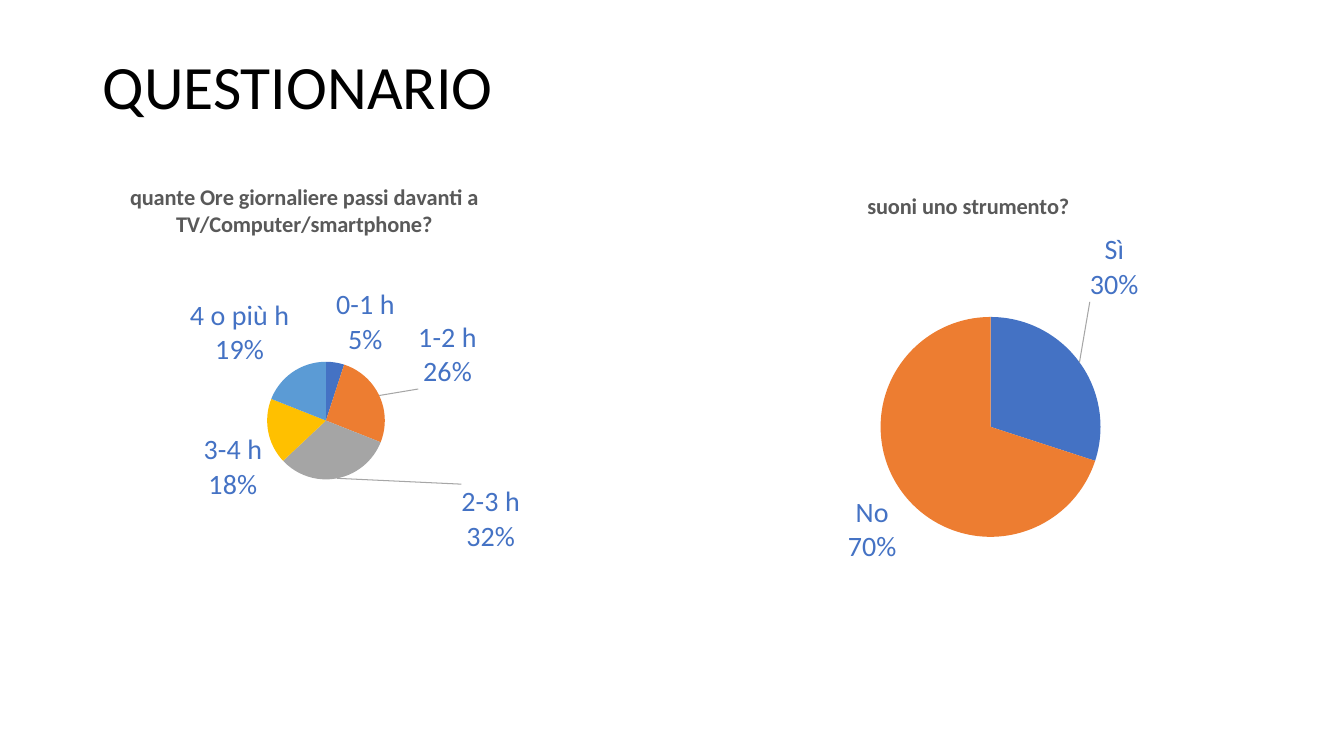
import copy
import pptx
import pptx.chart.data
import pptx.dml.color
import pptx.enum.chart
import pptx.enum.text
import pptx.oxml
import pptx.oxml.ns
import pptx.util

Inches, Pt = pptx.util.Inches, pptx.util.Pt
RGB = pptx.dml.color.RGBColor
qn = pptx.oxml.ns.qn

BLACK = RGB(0x00, 0x00, 0x00)
GREY = RGB(0x59, 0x59, 0x59)
BLUE = RGB(0x44, 0x72, 0xC4)
SLICES = [BLUE, RGB(0xED, 0x7D, 0x31), RGB(0xA5, 0xA5, 0xA5),
          RGB(0xFF, 0xC0, 0x00), RGB(0x5B, 0x9B, 0xD5)]

HEADING = "QUESTIONARIO"
CHARTS = [
    {"box": (0.37, 1.66, 5.56, 3.99),
     "title": "quante Ore giornaliere passi davanti a\nTV/Computer/smartphone?",
     "title_at": (0.16, 0.03),
     "plot": (0.41, 0.48, 0.21, 0.3),
     "data": {"0-1 h": 5, "1-2 h": 26, "2-3 h": 32, "3-4 h": 18, "4 o più h": 19},
     "moved": {1: (0.06, -0.01), 2: (0.22, 0)}},
    {"box": (7.08, 1.61, 5.49, 4.04),
     "title": "suoni uno strumento?",
     "title_at": (0.27, 0.06),
     "plot": (0.09, 0.38, 0.82, 0.54),
     "data": {"Sì": 30, "No": 70},
     "moved": {0: (0.01, -0.14)}},
]
TITLE_FONT = {"name": "Calibri", "size": Pt(16), "bold": True}
LABEL_FONT = {"name": "Calibri", "size": Pt(20), "bold": False}
HEADING_FONT = {"name": "Calibri", "size": Pt(44)}
LABELS = {"show_value": False, "show_category_name": True, "show_percentage": True,
          "position": pptx.enum.chart.XL_LABEL_POSITION.OUTSIDE_END}
NS = ('xmlns:c="http://schemas.openxmlformats.org/drawingml/2006/chart" '
      'xmlns:a="http://schemas.openxmlformats.org/drawingml/2006/main"')


def apply(obj, values):
    for name, value in values.items():
        setattr(obj, name, value)


def style(font, values, color):
    apply(font, values)
    font.color.rgb = color


def xml(tag, body):
    return pptx.oxml.parse_xml(f"<c:{tag} {NS}>{body}</c:{tag}>")


def layout(values, edge=True, inner=False):
    body = '<c:layoutTarget val="inner"/>' if inner else ""
    if edge:
        body += '<c:xMode val="edge"/><c:yMode val="edge"/>'
    body += "".join(f'<c:{k} val="{v}"/>' for k, v in zip("xywh", values))
    return xml("layout", f"<c:manualLayout>{body}</c:manualLayout>")


def drop_layout(parent):
    for old in parent.findall(qn("c:layout")):
        parent.remove(old)


def add_title(chart, text, at):
    tf = chart.chart_title.text_frame
    tf.text = text
    for p in tf.paragraphs:
        p.alignment = pptx.enum.text.PP_ALIGN.CENTER
        for r in p.runs:
            style(r.font, TITLE_FONT, GREY)
    title = chart.chart_title._element
    drop_layout(title)
    title.find(qn("c:tx")).addnext(layout(at))


def add_labels(series, moved):
    labels = series.data_labels
    apply(labels, LABELS)
    style(labels.font, LABEL_FONT, BLUE)
    el = labels._element
    el.find(qn("c:showBubbleSize")).addnext(xml("separator", "\n"))
    leader = el.find(qn("c:showLeaderLines"))
    leader.set("val", "1")
    shared = [child for child in el if child is not leader]
    leader.addnext(xml("leaderLines", '<c:spPr><a:ln w="9525"><a:solidFill>'
                       '<a:srgbClr val="A6A6A6"/></a:solidFill></a:ln></c:spPr>'))
    for pos, (idx, offset) in enumerate(moved.items()):
        label = xml("dLbl", f'<c:idx val="{idx}"/>')
        label.append(layout(offset, edge=False))
        for child in shared:
            label.append(copy.deepcopy(child))
        el.insert(pos, label)


def add_pie(s, item):
    data = pptx.chart.data.CategoryChartData()
    data.categories = list(item["data"])
    data.add_series("Series 1", list(item["data"].values()))
    chart = s.shapes.add_chart(pptx.enum.chart.XL_CHART_TYPE.PIE,
                               *map(Inches, item["box"]), data).chart
    chart.has_legend = False
    style(chart.font, {"name": "Calibri", "size": Pt(10)}, BLACK)
    add_title(chart, item["title"], item["title_at"])
    plot = chart.plots[0]
    plot.vary_by_categories = True
    area = plot._element.getparent()
    drop_layout(area)
    area.insert(0, layout(item["plot"], inner=True))
    series = plot.series[0]
    for i, color in enumerate(SLICES[:len(item["data"])]):
        fill = series.points[i].format.fill
        fill.solid()
        fill.fore_color.rgb = color
    add_labels(series, item["moved"])


def main():
    prs = pptx.Presentation()
    prs.slide_width, prs.slide_height = Inches(13.33), Inches(7.5)
    s = prs.slides.add_slide(prs.slide_layouts[6])
    tf = s.shapes.add_textbox(*map(Inches, (0.92, 0.16, 11.5, 1.45))).text_frame
    apply(tf, {"word_wrap": True, "vertical_anchor": pptx.enum.text.MSO_ANCHOR.MIDDLE})
    p = tf.paragraphs[0]
    p.line_spacing = 0.9
    r = p.add_run()
    r.text = HEADING
    style(r.font, HEADING_FONT, BLACK)
    for item in CHARTS:
        add_pie(s, item)
    prs.save("out.pptx")


if __name__ == "__main__":
    main()
